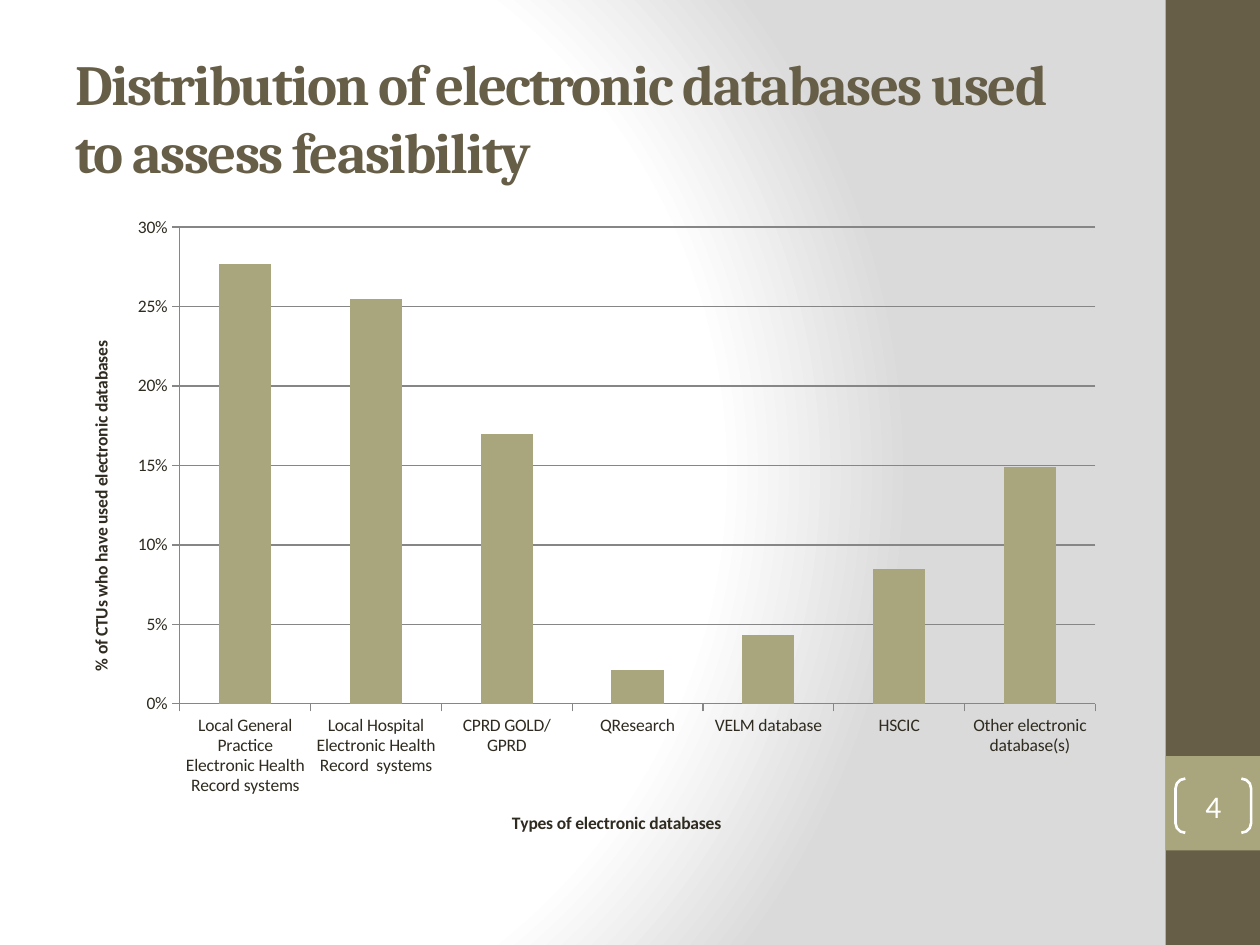
from dataclasses import dataclass

from pptx import Presentation
from pptx.chart.data import CategoryChartData
from pptx.dml.color import RGBColor
from pptx.enum.chart import XL_CHART_TYPE, XL_TICK_MARK
from pptx.enum.shapes import MSO_SHAPE
from pptx.enum.text import MSO_ANCHOR, MSO_AUTO_SIZE, PP_ALIGN
from pptx.oxml import parse_xml
from pptx.oxml.ns import nsdecls
from pptx.util import Inches, Pt

COLUMN_CLUSTERED = XL_CHART_TYPE.COLUMN_CLUSTERED
TICK_OUTSIDE = XL_TICK_MARK.OUTSIDE
RECTANGLE, BRACKETS = MSO_SHAPE.RECTANGLE, MSO_SHAPE.DOUBLE_BRACKET
MIDDLE, LEFT, CENTER = MSO_ANCHOR.MIDDLE, PP_ALIGN.LEFT, PP_ALIGN.CENTER
NO_AUTOFIT = MSO_AUTO_SIZE.NONE

WIDTH, HEIGHT = 10, 7.5
TITLE_ONLY = 5
BROWN, OLIVE, INK, GREY, WHITE = "675E47", "A9A57C", "2F2B20", "868686", "FFFFFF"
HEADING_FONT, BODY_FONT = "Cambria", "Calibri"
BACKGROUND = f"""<p:bg {nsdecls("p", "a")}><p:bgPr><a:gradFill rotWithShape="1"><a:gsLst>
<a:gs pos="0"><a:srgbClr val="FFFFFF"/></a:gs>
<a:gs pos="75000"><a:srgbClr val="FFFFFF"/></a:gs>
<a:gs pos="100000"><a:srgbClr val="DADADA"/></a:gs></a:gsLst>
<a:path path="circle"><a:fillToRect l="20000" t="50000" r="100000" b="50000"/></a:path>
</a:gradFill><a:effectLst/></p:bgPr></p:bg>"""

DATABASE_USE = {
    "Local General Practice Electronic Health Record systems": 0.277,
    "Local Hospital Electronic Health Record  systems": 0.255,
    "CPRD GOLD/ GPRD": 0.17,
    "QResearch": 0.021,
    "VELM database": 0.043,
    "HSCIC": 0.085,
    "Other electronic database(s)": 0.149,
}


@dataclass
class Area:
    """Position and size as shares of the slide."""
    left: float
    top: float
    width: float
    height: float

    def lengths(self) -> tuple:
        return (Inches(self.left * WIDTH), Inches(self.top * HEIGHT),
                Inches(self.width * WIDTH), Inches(self.height * HEIGHT))


@dataclass
class Block:
    area: Area
    color: str


SIDEBAR = [
    Block(Area(0.925, 0, 0.075, 1), BROWN),
    Block(Area(0.925, 0.8, 0.075, 0.1), OLIVE),
]
TITLE_AREA = Area(0.05, 0.04, 0.833, 0.1667)
NUMBER_AREA = Area(0.933, 0.824, 0.06, 0.0573)
CHART_AREA = Area(0.051, 0.216, 0.835, 0.6933)


def rgb(color: str) -> RGBColor:
    return RGBColor.from_string(color)


def format_font(font, color: str, **values) -> None:
    font.color.rgb = rgb(color)
    for name, value in values.items():
        setattr(font, name, value)


def draw_block(slide, block: Block) -> None:
    shape = slide.shapes.add_shape(RECTANGLE, *block.area.lengths())
    shape.shadow.inherit = False
    shape.fill.solid()
    shape.fill.fore_color.rgb = rgb(block.color)
    shape.line.fill.background()


def write_title(slide, text: str) -> None:
    title = slide.shapes.title
    title.left, title.top, title.width, title.height = TITLE_AREA.lengths()
    frame = title.text_frame
    frame.text = text
    frame.auto_size = NO_AUTOFIT
    frame.vertical_anchor = MIDDLE
    para = frame.paragraphs[0]
    para.alignment = LEFT
    font = para.runs[0].font
    format_font(font, BROWN, name=HEADING_FONT, size=Pt(32.4), bold=True)
    para.runs[0].font._element.set("spc", "-100")


def draw_page_number(slide, number: str) -> None:
    shape = slide.shapes.add_shape(BRACKETS, *NUMBER_AREA.lengths())
    shape.shadow.inherit = False
    shape.adjustments[0] = 0.18
    shape.fill.background()
    shape.line.color.rgb = rgb(WHITE)
    shape.line.width = Pt(1.5)
    frame = shape.text_frame
    for side in ("left", "top", "right", "bottom"):
        setattr(frame, f"margin_{side}", 0)
    frame.vertical_anchor = MIDDLE
    frame.text = number
    para = frame.paragraphs[0]
    para.alignment = CENTER
    format_font(para.runs[0].font, WHITE, name=BODY_FONT, size=Pt(18))


def format_axis(axis, title: str) -> None:
    axis.major_tick_mark = TICK_OUTSIDE
    axis.format.line.color.rgb = rgb(GREY)
    frame = axis.axis_title.text_frame
    frame.text = title
    format_font(frame.paragraphs[0].runs[0].font, INK,
                name=BODY_FONT, size=Pt(10), bold=True)


def draw_chart(slide) -> None:
    data = CategoryChartData(number_format="0%")
    data.categories = list(DATABASE_USE)
    data.add_series("Series 1", list(DATABASE_USE.values()))
    chart = slide.shapes.add_chart(
        COLUMN_CLUSTERED, *CHART_AREA.lengths(), data).chart
    chart.has_legend = chart.has_title = False
    format_font(chart.font, INK, name=BODY_FONT, size=Pt(10))

    plot = chart.plots[0]
    plot.gap_width = 150
    plot.vary_by_categories = False
    bars = plot.series[0].format.fill
    bars.solid()
    bars.fore_color.rgb = rgb(OLIVE)

    format_axis(chart.category_axis, "Types of electronic databases")
    shares = chart.value_axis
    format_axis(shares, "% of CTUs who have used electronic databases")
    shares.minimum_scale, shares.maximum_scale, shares.major_unit = 0, 0.3, 0.05
    shares.tick_labels.number_format = "0%"
    shares.tick_labels.number_format_is_linked = False
    shares.has_major_gridlines = True
    shares.major_gridlines.format.line.color.rgb = rgb(GREY)


def main() -> None:
    deck = Presentation()
    deck.slide_width, deck.slide_height = Inches(WIDTH), Inches(HEIGHT)
    slide = deck.slides.add_slide(deck.slide_layouts[TITLE_ONLY])
    slide.element.cSld.insert(0, parse_xml(BACKGROUND))
    for block in SIDEBAR:
        draw_block(slide, block)
    write_title(slide, "Distribution of electronic databases used to assess feasibility")
    draw_page_number(slide, "4")
    draw_chart(slide)
    deck.save("out.pptx")


if __name__ == "__main__":
    main()
